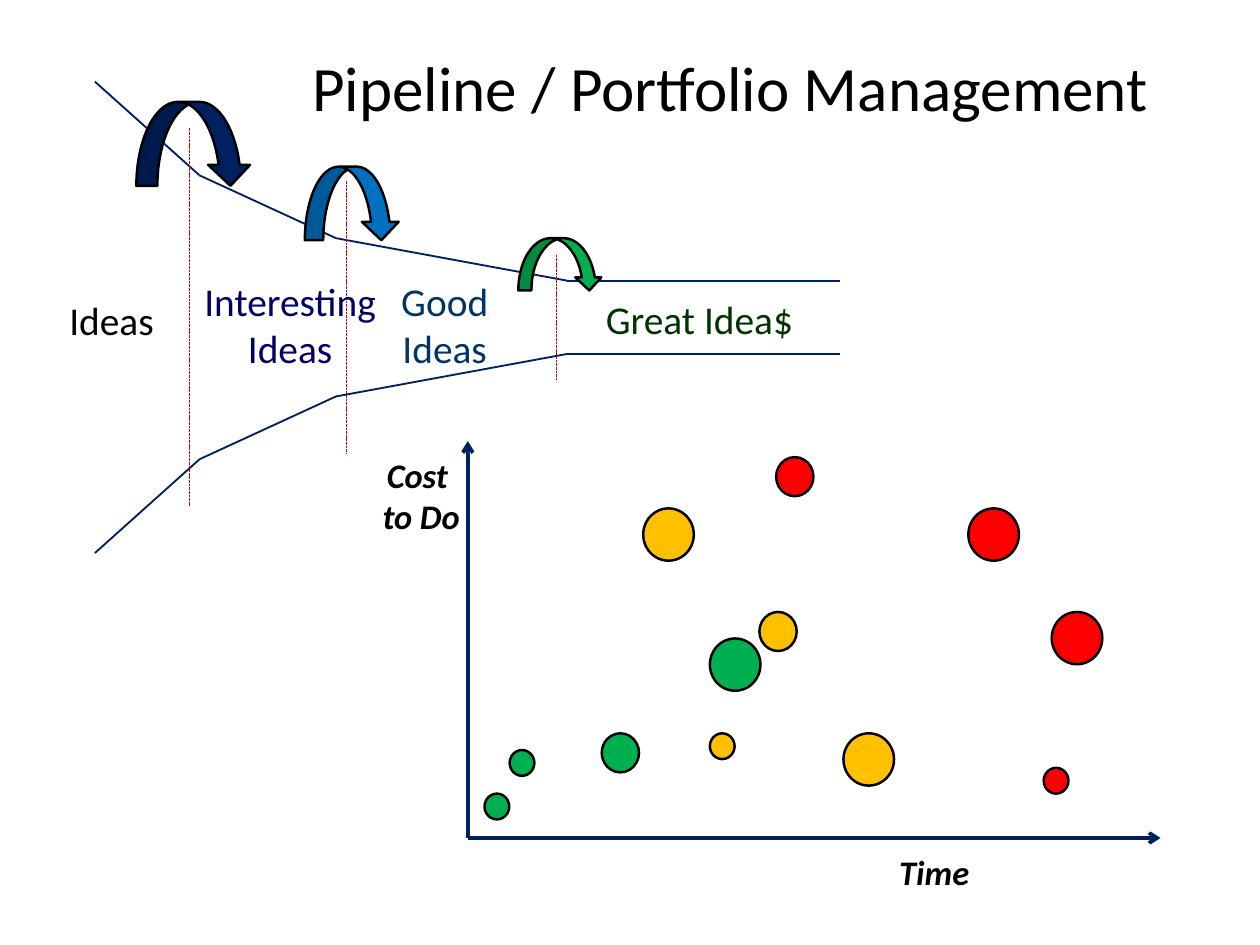
from dataclasses import dataclass

from pptx import Presentation
from pptx.dml.color import RGBColor
from pptx.enum.dml import MSO_LINE
from pptx.enum.shapes import MSO_CONNECTOR, MSO_SHAPE
from pptx.enum.text import MSO_ANCHOR, MSO_AUTO_SIZE, PP_ALIGN
from pptx.oxml.ns import qn
from pptx.shapes.connector import Connector
from pptx.slide import Slide
from pptx.text.text import TextFrame
from pptx.util import Cm, Pt
from lxml.etree import SubElement

COLORS = {
    "black": "000000",
    "navy": "002060",
    "blue": "0070C0",
    "green": "00B050",
    "amber": "FFC000",
    "red": "FF0000",
    "gate": "C00000",
    "interesting": "000066",
    "good": "003366",
    "great": "003300",
}
BUBBLE_SIZES = {"small": (0.71, 0.74), "medium": (1.07, 1.12), "large": (1.45, 1.5)}
FUNNEL_MIDDLE = 9.1
FUNNEL_OUTLINE = [(2.72, 6.76), (5.72, 4.07), (9.63, 2.27), (16.26, 1.05), (24.08, 1.05)]
AXIS_ORIGIN = (13.41, 24.03)
AXIS_ENDS = [(13.41, 12.65), (33.27, 24.03)]


@dataclass
class Gate:
    x: float
    half_height: float


@dataclass
class Label:
    text: str
    left: float
    top: float
    width: float
    height: float
    color: str = "black"
    size: float = 32
    emphasis: bool = False


@dataclass
class Arrow:
    left: float
    top: float
    width: float
    height: float
    color: str


@dataclass
class Bubble:
    left: float
    top: float
    size: str
    color: str


GATES = [Gate(15.95, 1.8), Gate(9.93, 3.91), Gate(5.42, 5.42)]
STAGE_LABELS = [
    Label("Ideas", 1.55, 8.38, 3.3, 1.63),
    Label("Interesting\nIdeas", 5.41, 7.82, 5.82, 3, "interesting"),
    Label("Good\nIdeas", 11.1, 7.82, 3.3, 3, "good"),
    Label("Great Idea$", 16.79, 8.33, 6.53, 1.63, "great"),
]
AXIS_LABELS = [
    Label("Cost \vto Do", 10.54, 12.9, 3.07, 2.64, size=28, emphasis=True),
    Label("Time", 25.37, 24.28, 2.82, 1.45, size=28, emphasis=True),
]
ARROWS = [
    Arrow(3.91, 2.92, 3.3, 2.41, "navy"),
    Arrow(8.74, 4.78, 2.72, 2.11, "blue"),
    Arrow(14.86, 6.83, 2.41, 1.5, "green"),
]
BUBBLES = [
    Bubble(20.35, 21.03, "small", "amber"),
    Bubble(21.77, 17.55, "medium", "amber"),
    Bubble(18.44, 14.58, "large", "amber"),
    Bubble(14.61, 21.51, "small", "green"),
    Bubble(17.25, 21.03, "medium", "green"),
    Bubble(20.35, 18.31, "large", "green"),
    Bubble(29.92, 22.02, "small", "red"),
    Bubble(22.25, 13.11, "medium", "red"),
    Bubble(30.15, 17.55, "large", "red"),
    Bubble(24.18, 21.03, "large", "amber"),
    Bubble(13.89, 22.76, "small", "green"),
    Bubble(27.76, 14.58, "large", "red"),
]


def rgb(color: str) -> RGBColor:
    return RGBColor.from_string(COLORS[color])


def write_text(text_frame: TextFrame, text: str, *, size: float,
               color: str = "black", emphasis: bool = False) -> None:
    text_frame.text = text
    for paragraph in text_frame.paragraphs:
        paragraph.alignment = PP_ALIGN.CENTER
        for run in paragraph.runs:
            run.font.name = "Calibri"
            run.font.size = Pt(size)
            run.font.color.rgb = rgb(color)
            run.font.bold = emphasis
            run.font.italic = emphasis


def add_title(slide: Slide) -> None:
    title = slide.shapes.title
    title.left, title.top, title.width, title.height = Cm(4.78), Cm(0.43), Cm(29.06), Cm(4.06)
    text_frame = title.text_frame
    text_frame.auto_size = MSO_AUTO_SIZE.NONE
    text_frame.vertical_anchor = MSO_ANCHOR.MIDDLE
    text_frame.margin_left = Cm(3.42)
    text_frame.margin_top = text_frame.margin_right = text_frame.margin_bottom = Cm(0.15)
    write_text(text_frame, "Pipeline / Portfolio Management", size=51.3)


def add_line(slide: Slide, start: tuple[float, float], end: tuple[float, float],
             color: str, width: float) -> Connector:
    connector = slide.shapes.add_connector(
        MSO_CONNECTOR.STRAIGHT, Cm(start[0]), Cm(start[1]), Cm(end[0]), Cm(end[1]))
    connector.line.color.rgb = rgb(color)
    connector.line.width = Pt(width)
    SubElement(connector._element.spPr, qn("a:effectLst"))
    return connector


def add_funnel(slide: Slide) -> None:
    for side in (-1, 1):
        points = [(x, FUNNEL_MIDDLE + side * offset) for x, offset in FUNNEL_OUTLINE]
        for start, end in zip(points, points[1:]):
            add_line(slide, start, end, "navy", 1.5)


def add_gate(slide: Slide, gate: Gate) -> None:
    connector = add_line(slide, (gate.x, FUNNEL_MIDDLE - gate.half_height),
                         (gate.x, FUNNEL_MIDDLE + gate.half_height), "gate", 0.75)
    connector.line.dash_style = MSO_LINE.SQUARE_DOT


def add_axis(slide: Slide, end: tuple[float, float]) -> None:
    connector = add_line(slide, AXIS_ORIGIN, end, "navy", 3)
    SubElement(connector.line._get_or_add_ln(), qn("a:tailEnd"), type="arrow")


def add_label(slide: Slide, label: Label) -> None:
    box = slide.shapes.add_textbox(
        Cm(label.left), Cm(label.top), Cm(label.width), Cm(label.height))
    box.text_frame.word_wrap = False
    box.text_frame.auto_size = MSO_AUTO_SIZE.SHAPE_TO_FIT_TEXT
    write_text(box.text_frame, label.text, size=label.size,
               color=label.color, emphasis=label.emphasis)


def add_outlined_shape(slide: Slide, kind: MSO_SHAPE, left: float, top: float,
                       width: float, height: float, color: str) -> None:
    shape = slide.shapes.add_shape(kind, Cm(left), Cm(top), Cm(width), Cm(height))
    shape.shadow.inherit = False
    shape.fill.solid()
    shape.fill.fore_color.rgb = rgb(color)
    shape.line.color.rgb = rgb("black")
    shape.line.width = Pt(2)


def main() -> None:
    presentation = Presentation()
    presentation.slide_width, presentation.slide_height = Cm(36.12), Cm(27.1)
    slide = presentation.slides.add_slide(presentation.slide_layouts[5])
    add_title(slide)
    add_funnel(slide)
    for gate in GATES:
        add_gate(slide, gate)
    for label in STAGE_LABELS:
        add_label(slide, label)
    for arrow in ARROWS:
        add_outlined_shape(slide, MSO_SHAPE.CURVED_DOWN_ARROW, arrow.left, arrow.top,
                           arrow.width, arrow.height, arrow.color)
    for end in AXIS_ENDS:
        add_axis(slide, end)
    for label in AXIS_LABELS:
        add_label(slide, label)
    for bubble in BUBBLES:
        add_outlined_shape(slide, MSO_SHAPE.OVAL, bubble.left, bubble.top,
                           *BUBBLE_SIZES[bubble.size], bubble.color)
    presentation.save("out.pptx")


if __name__ == "__main__":
    main()
